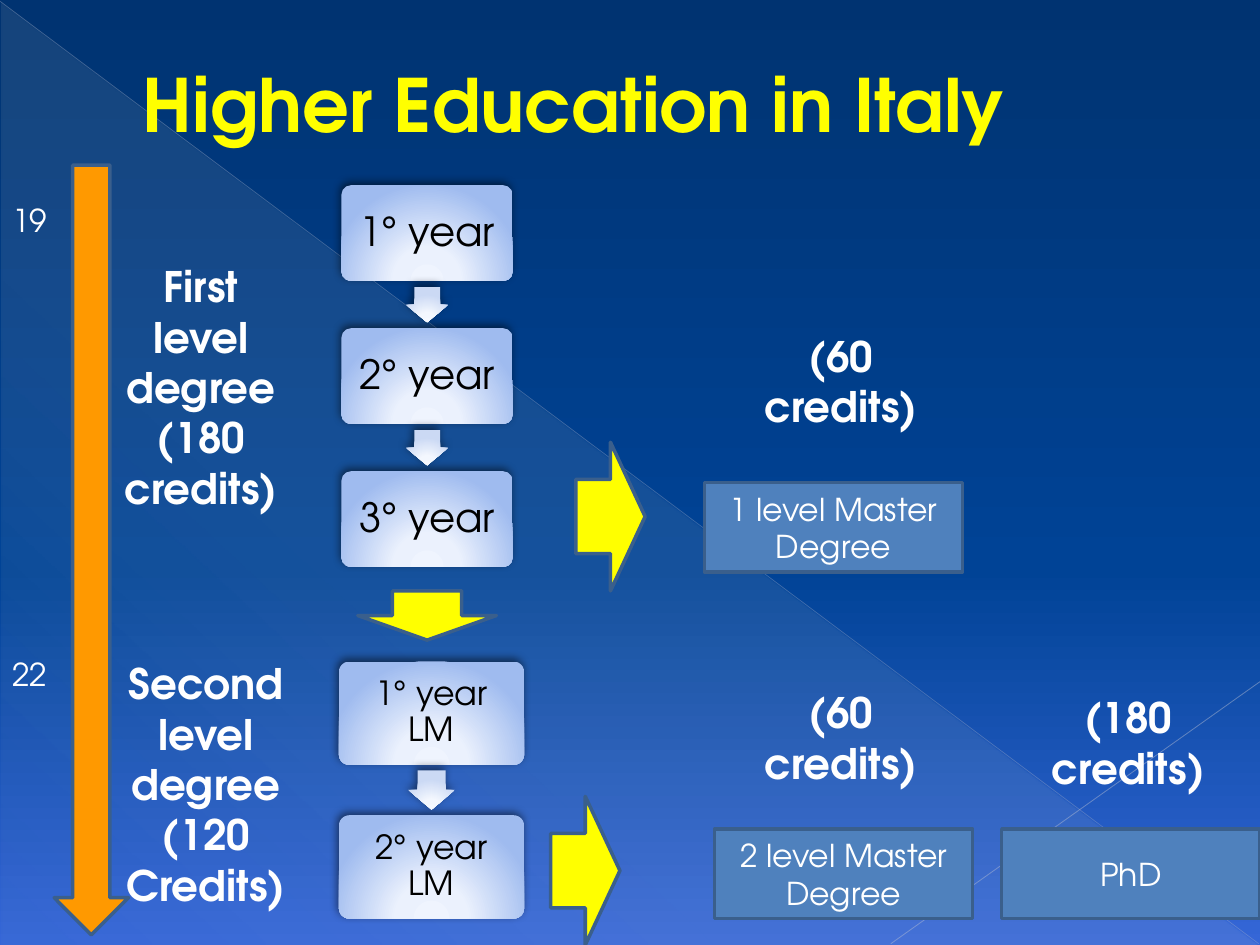
from dataclasses import dataclass

from pptx import Presentation
from pptx import util as u
from pptx.dml.color import RGBColor
from pptx.enum import shapes, text
from pptx.oxml import parse_xml
from pptx.oxml.ns import nsdecls, qn

SHAPE = shapes.MSO_SHAPE
ALIGN = text.PP_ALIGN
ANCHOR = text.MSO_ANCHOR


@dataclass(frozen=True)
class Theme:
    font: str = "TeX Gyre Adventor"
    title_size: float = 42
    level_size: float = 24
    year_size: float = 23
    lm_size: float = 19
    body_size: float = 18
    white: str = "FFFFFF"
    black: str = "000000"
    yellow: str = "FFFF00"
    orange: str = "FF9900"
    blue: str = "4F81BD"
    edge: str = "3A5F8C"
    title_edge: str = "375983"
    # Gradient stops: position %, colour, opacity %
    sky: tuple = ((0, "003371", 100), (60, "004396", 100), (100, "3566D7", 100))
    veil: tuple = ((0, "EEECE1", 10), (70, "EEECE1", 8), (100, "EEECE1", 1))
    card: tuple = ((0, "EFF4FE", 100), (34, "EBF1FD", 100), (100, "9FBBEF", 100))
    step: tuple = ((0, "F6F9FF", 100), (34, "F3F7FE", 100), (100, "CBD9F4", 100))


class Deck:
    """Holds the theme and the current slide."""

    def __init__(self, slide, theme):
        self.slide, self.theme = slide, theme

    def gradient(self, fill, owner, stops, angle=None):
        """Linear gradient at an angle, or a glow from below without one."""
        if angle is None:
            course = ('<a:path path="circle"><a:fillToRect l="50000" t="155000" '
                      'r="50000" b="-55000"/></a:path>')
        else:
            course = f'<a:lin ang="{angle * 60000}" scaled="0"/>'
        marks = "".join(
            f'<a:gs pos="{pos * 1000}"><a:srgbClr val="{color}">'
            f'<a:alpha val="{opacity * 1000}"/></a:srgbClr></a:gs>'
            for pos, color, opacity in stops)
        fill.gradient()
        plain = owner.find(".//" + qn("a:gradFill"))
        plain.getparent().replace(plain, parse_xml(
            f'<a:gradFill {nsdecls("a")} rotWithShape="1">'
            f"<a:gsLst>{marks}</a:gsLst>{course}</a:gradFill>"))

    def set_text(self, frame, lines, size, color, bold=False, align=ALIGN.CENTER):
        frame.text = "\n".join(lines)
        for paragraph in frame.paragraphs:
            paragraph.alignment = align
            font = paragraph.font
            font.name, font.size, font.bold = self.theme.font, u.Pt(size), bold
            font.color.rgb = RGBColor.from_string(color)

    def title(self, words, box):
        title = self.slide.shapes.title
        title.left, title.top, title.width, title.height = map(u.Inches, box)
        frame = title.text_frame
        frame.vertical_anchor = ANCHOR.MIDDLE
        self.set_text(frame, [words], self.theme.title_size, self.theme.yellow,
                      True, ALIGN.LEFT)
        props = frame.paragraphs[0]._p.get_or_add_pPr()
        props.set("marL", str(u.Inches(0.53)))
        props.set("indent", "0")
        props.find(qn("a:defRPr")).insert(0, parse_xml(
            f'<a:ln {nsdecls("a")} w="6350"><a:solidFill><a:srgbClr '
            f'val="{self.theme.title_edge}"/></a:solidFill></a:ln>'))
        # Bring the title in front of the backdrop
        self.slide.shapes._spTree.append(title._element)

    def shape(self, kind, box, fill=None):
        shape = self.slide.shapes.add_shape(kind, *map(u.Inches, box))
        shape.shadow.inherit = False
        if fill:
            shape.fill.solid()
            shape.fill.fore_color.rgb = RGBColor.from_string(fill)
            shape.line.color.rgb = RGBColor.from_string(self.theme.edge)
            shape.line.width = u.Pt(2)
        else:
            shape.line.fill.background()
        return shape

    def glossy(self, kind, box, stops):
        shape = self.shape(kind, box)
        self.gradient(shape.fill, shape._element, stops)
        shape._element.spPr.find(qn("a:effectLst")).append(parse_xml(
            f'<a:outerShdw {nsdecls("a")} blurRad="{u.Pt(5)}" dist="{u.Pt(2)}" '
            f'dir="{245 * 60000}" rotWithShape="0"><a:srgbClr '
            f'val="{self.theme.black}"><a:alpha val="50000"/></a:srgbClr>'
            "</a:outerShdw>"))
        return shape

    def degree(self, words, left, top):
        box = self.shape(SHAPE.RECTANGLE, (left, top, 2.05, 0.71), self.theme.blue)
        box.text_frame.vertical_anchor = ANCHOR.MIDDLE
        self.set_text(box.text_frame, [words], self.theme.body_size,
                      self.theme.white)

    def years(self, labels, left, top, width, height, pitch, arrow, size):
        """Column of year cards with a small arrow centred in each gap."""
        for i, label in enumerate(labels):
            y = top + i * pitch
            card = self.glossy(SHAPE.ROUNDED_RECTANGLE, (left, y, width, height),
                               self.theme.card)
            card.adjustments[0] = 0.1
            frame = card.text_frame
            frame.margin_left = frame.margin_right = u.Inches(0.08)
            frame.margin_top = frame.margin_bottom = u.Inches(0.08)
            frame.vertical_anchor = ANCHOR.MIDDLE
            self.set_text(frame, [label], size, self.theme.black)
            frame.paragraphs[0].line_spacing = 0.9
            if i:
                across, along = arrow
                middle = y - (pitch - height) / 2
                step = self.glossy(
                    SHAPE.RIGHT_ARROW,
                    (left + (width - across) / 2, middle - along / 2, across, along),
                    self.theme.step)
                step.adjustments[0] = 0.6
                step.rotation = 90

    def label(self, lines, box, size, bold=True, align=ALIGN.CENTER, wrap=True):
        frame = self.slide.shapes.add_textbox(*map(u.Inches, box)).text_frame
        frame.word_wrap = wrap
        frame.auto_size = text.MSO_AUTO_SIZE.SHAPE_TO_FIT_TEXT
        self.set_text(frame, lines, size, self.theme.white, bold, align)
        return frame

    def hairline(self, start, end, color, width, opacity):
        line = self.slide.shapes.add_connector(
            shapes.MSO_CONNECTOR.STRAIGHT, *map(u.Inches, start + end))
        line.line.color.rgb = RGBColor.from_string(color)
        line.line.width = u.Pt(width)
        props = line._element.spPr
        props.find(".//" + qn("a:srgbClr")).append(
            parse_xml(f'<a:alpha {nsdecls("a")} val="{opacity * 1000}"/>'))
        props.append(parse_xml(f'<a:effectLst {nsdecls("a")}/>'))

    def backdrop(self):
        self.gradient(self.slide.background.fill, self.slide._element,
                      self.theme.sky, 90)
        veil = self.shape(SHAPE.RIGHT_TRIANGLE, (0.01, 0.02, 9.98, 7.48))
        self.gradient(veil.fill, veil._element, self.theme.veil, 133)
        self.hairline((0, 0.01), (9.99, 7.49), "ADB6CE", 0.39, 35)
        self.hairline((10, 5.41), (7.07, 7.49), "B6BED3", 0.47, 45)


def main():
    prs = Presentation()
    prs.slide_width, prs.slide_height = u.Inches(10), u.Inches(7.5)
    theme = Theme()
    deck = Deck(prs.slides.add_slide(prs.slide_layouts[5]), theme)
    deck.backdrop()
    deck.title("Higher Education in Italy", (0.5, 0.05, 9, 1.53))

    # Study years of both levels
    deck.years(["1° year", "2° year", "3° year"], 2.71, 1.47, 1.36, 0.76, 1.135,
               (0.28, 0.34), theme.year_size)
    deck.years(["1° year LM", "2° year LM"], 2.69, 5.25, 1.47, 0.82, 1.22,
               (0.31, 0.37), theme.lm_size)

    # Degrees that follow
    deck.degree("1 level Master Degree", 5.59, 3.83)
    deck.degree("2 level Master Degree", 5.67, 6.58)
    deck.degree("PhD", 7.95, 6.58)

    # Level names
    deck.label(["First level degree", "(180 credits)"], (0.79, 2.02, 1.61, 2.12),
               theme.level_size)
    deck.label(["Second", "level degree", "(120 Credits)"],
               (0.83, 5.17, 1.61, 2.12), theme.level_size)

    # Paths between levels and the age axis
    for left, top in ((4.57, 3.51), (4.37, 6.32)):
        deck.shape(SHAPE.RIGHT_ARROW, (left, top, 0.55, 1.18), theme.yellow)
    deck.shape(SHAPE.DOWN_ARROW, (2.84, 4.69, 1.1, 0.39), theme.yellow)
    deck.shape(SHAPE.DOWN_ARROW, (0.43, 1.31, 0.59, 6.11), theme.orange)
    ages = deck.label(["19", "22"], (0, 1.55, 0.48, 4.34), theme.body_size,
                      bold=False, align=ALIGN.LEFT, wrap=False)
    ages.paragraphs[1].space_before = u.Pt(237.6)

    # Credits
    for credits, left, top in (("(60 credits)", 5.87, 2.57),
                               ("(60 credits)", 5.87, 5.4),
                               ("(180 credits)", 8.15, 5.44)):
        deck.label([credits], (left, top, 1.61, 0.91), theme.level_size)

    prs.save("out.pptx")


if __name__ == "__main__":
    main()
